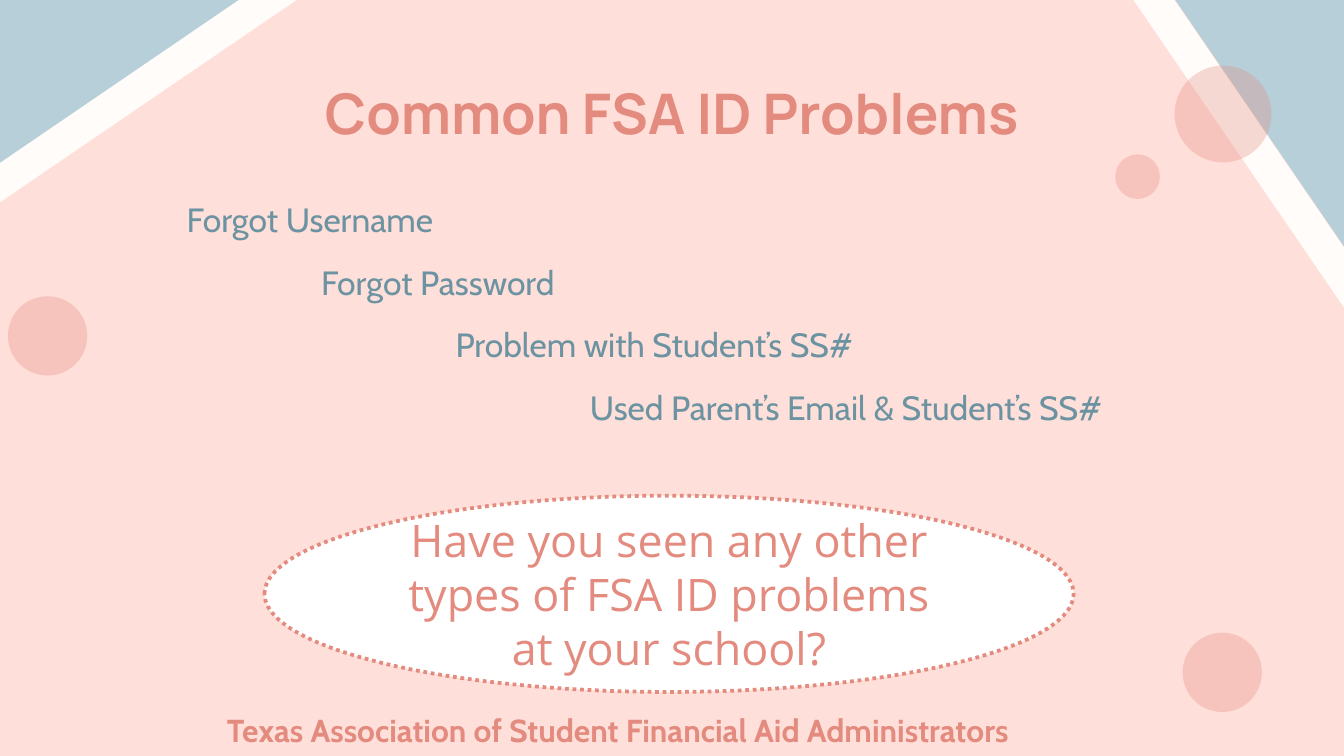
from lxml.etree import SubElement
from pptx import Presentation
from pptx.dml.color import RGBColor
from pptx.enum.dml import MSO_LINE_DASH_STYLE as Dash
from pptx.enum.shapes import MSO_SHAPE as Shape
from pptx.enum.text import MSO_ANCHOR as Anchor, PP_ALIGN as Align
from pptx.oxml.ns import qn
from pptx.util import Cm, Pt

BLUSH = RGBColor(0xFF, 0xDF, 0xD9)
CREAM = RGBColor(0xFF, 0xFC, 0xF9)
SKY = RGBColor(0xB6, 0xCF, 0xD8)
CORAL = RGBColor(0xE4, 0x8B, 0x7F)
TEAL = RGBColor(0x6C, 0x93, 0xA1)
WHITE = RGBColor(0xFF, 0xFF, 0xFF)

TITLE = "Common FSA ID Problems"
PROBLEMS = [
    "Forgot Username",
    "Forgot Password",
    "Problem with Student’s SS#",
    "Used Parent’s Email & Student’s SS#",
]
QUESTION = "Have you seen any other types of FSA ID problems at your school?"
ASSOCIATION = "Texas Association of Student Financial Aid Administrators"

BAND_LENGTH = 7.29
CORNER_BANDS = [
    (2.16, -1.9, 0.64, 235.7, CREAM),
    (-0.28, -3.53, 3.33, 235.7, SKY),
    (23.34, -0.94, 0.64, 325.6, CREAM),
    (23.65, -2.06, 3.33, 325.6, SKY),
]
BUBBLES = [
    (0.15, 5.6, 1.5),
    (22.35, 11.96, 1.5),
    (22.2, 1.24, 1.83),
    (21.08, 2.92, 0.84),
]
BUBBLE_OPACITY = 31
INDENT_STEP = 2.54


def add_filled(kind, left, top, width, height, color, opacity=100):
    shape = slide.shapes.add_shape(kind, Cm(left), Cm(top), Cm(width), Cm(height))
    shape.shadow.inherit = False
    shape.fill.solid()
    shape.fill.fore_color.rgb = color
    shape.line.fill.background()
    if opacity < 100:
        srgb = shape.fill._xPr.find(qn("a:solidFill")).find(qn("a:srgbClr"))
        SubElement(srgb, qn("a:alpha")).set("val", str(opacity * 1000))
    return shape


def write(shape, lines, size, font, color, bold=False, align=Align.LEFT,
          anchor=Anchor.TOP, inset=None, after=0, step=0):
    frame = shape.text_frame
    frame.word_wrap = True
    frame.vertical_anchor = anchor
    if inset is not None:
        frame.margin_left = frame.margin_right = Cm(inset)
        frame.margin_top = frame.margin_bottom = Cm(inset)
    for level, line in enumerate(lines):
        paragraph = frame.add_paragraph() if level else frame.paragraphs[0]
        paragraph.alignment = align
        paragraph.space_after = Pt(after)
        if step and level:
            paragraph._p.get_or_add_pPr().set("marL", str(Cm(step * level)))
        run = paragraph.add_run()
        run.text = line
        run.font.size = Pt(size)
        run.font.name = font
        run.font.bold = bold
        run.font.color.rgb = color


def add_text(left, top, width, height, lines, **style):
    box = slide.shapes.add_textbox(Cm(left), Cm(top), Cm(width), Cm(height))
    write(box, lines, **style)


deck = Presentation()
deck.slide_width, deck.slide_height = Cm(25.4), Cm(14.29)
slide = deck.slides.add_slide(deck.slide_layouts[6])
slide.background.fill.solid()
slide.background.fill.fore_color.rgb = BLUSH

for left, top, width, angle, color in CORNER_BANDS:
    band = add_filled(Shape.RECTANGLE, left, top, width, BAND_LENGTH, color)
    band.rotation = angle

for left, top, diameter in BUBBLES:
    add_filled(Shape.OVAL, left, top, diameter, diameter, CORAL, BUBBLE_OPACITY)

add_text(1.98, 1.24, 21.44, 1.6, [TITLE], size=30, font="Manrope", color=CORAL,
         bold=True, align=Align.CENTER, inset=0.25)
add_text(3.28, 3.51, 18.75, 5.51, PROBLEMS, size=18, font="Cabin", color=TEAL,
         inset=0.25, after=12, step=INDENT_STEP)
add_text(4.04, 13.31, 17.32, 0.98, [ASSOCIATION], size=17, font="Cabin",
         color=CORAL, bold=True)

question_oval = add_filled(Shape.OVAL, 5, 9.37, 15.29, 3.71, WHITE)
question_oval.line.color.rgb = CORAL
question_oval.line.width = Pt(2)
question_oval.line.dash_style = Dash.ROUND_DOT
write(question_oval, [QUESTION], size=24, font="Open Sans", color=CORAL,
      align=Align.CENTER, anchor=Anchor.MIDDLE)

deck.save("out.pptx")
